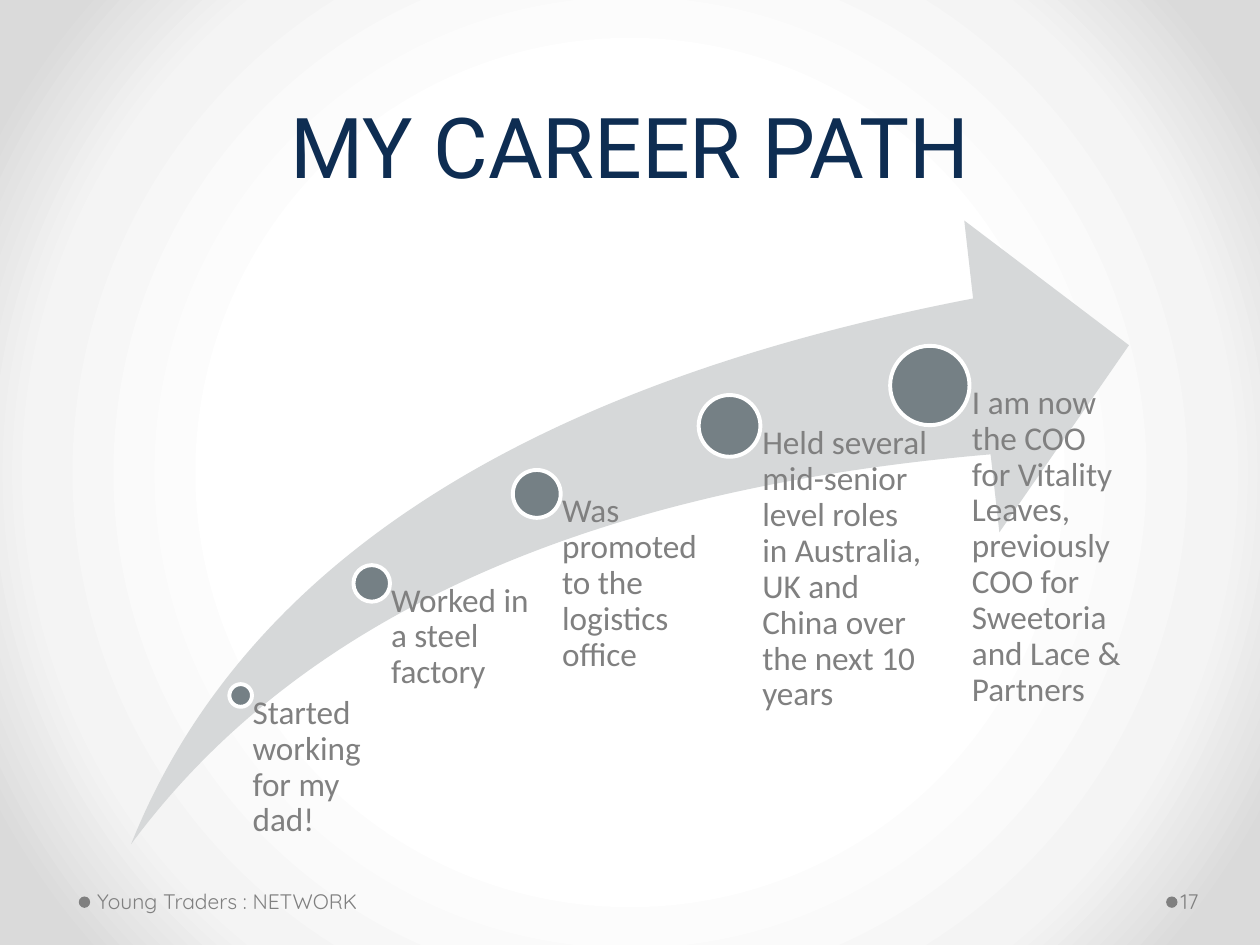
import pptx
import pptx.dml.color
import pptx.enum.shapes
import pptx.enum.text
import pptx.oxml
import pptx.oxml.ns
import pptx.util

Inches, Pt = pptx.util.Inches, pptx.util.Pt
SHAPE = pptx.enum.shapes.MSO_SHAPE
ALIGN = pptx.enum.text.PP_ALIGN
ANCHOR = pptx.enum.text.MSO_ANCHOR

COLORS = {
    "navy": "0E2D52",
    "gray": "808080",
    "arrow": "D6D8D9",
    "dot": "758085",
    "white": "FFFFFF",
    "pale": "F4F4F4",
    "edge": "DADADA",
}
FOOT = 6.95
BASE = 6.7  # bottom of the arrow and of all step texts

# centre x, centre y, diameter, text width, text
STEPS = [
    (1.91, 5.52, 0.18, 1.04, "Started working for my dad!"),
    (2.95, 4.63, 0.29, 1.31, "Worked in a steel factory"),
    (4.26, 3.92, 0.38, 1.53, "Was promoted to the logistics office"),
    (5.79, 3.38, 0.49, 1.58, "Held several mid-senior level roles in Australia, "
     "UK and China over the next 10 years"),
    (7.38, 3.06, 0.63, 1.58, "I am now the COO for Vitality Leaves, previously "
     "COO for Sweetoria and Lace & Partners"),
]


def rgb(name):
    return pptx.dml.color.RGBColor.from_string(COLORS[name])


def apply(target, values):
    for name, value in values.items():
        setattr(target, name, value)


class Deck:
    """Holds the text styles and the current slide."""

    styles = {
        "title": {"name": "Roboto", "size": Pt(48)},
        "step": {"name": "Calibri", "size": Pt(19)},
        "foot": {"name": "Quicksand", "size": Pt(12)},
    }

    def __init__(self, slide):
        self.slide = slide

    def glow(self, stops):
        """Fill the background with a gradient from the centre outwards."""
        fill = self.slide.background.fill
        fill.gradient()
        grad = self.slide.background._cSld.find(".//" + pptx.oxml.ns.qn("a:gradFill"))
        for child in list(grad):
            grad.remove(child)
        space = pptx.oxml.ns.nsdecls("a")
        marks = "".join(
            f'<a:gs pos="{place * 1000}"><a:srgbClr val="{COLORS[name]}"/></a:gs>'
            for place, name in stops)
        grad.append(pptx.oxml.parse_xml(f"<a:gsLst {space}>{marks}</a:gsLst>"))
        grad.append(pptx.oxml.parse_xml(
            f'<a:path {space} path="circle">'
            '<a:fillToRect l="50000" t="50000" r="50000" b="50000"/></a:path>'))

    def shape(self, kind, box, color, line=None):
        shape = self.slide.shapes.add_shape(kind, *map(Inches, box))
        shape.shadow.inherit = False
        shape.fill.solid()
        shape.fill.fore_color.rgb = rgb(color)
        if line:
            shape.line.color.rgb = rgb(line)
            shape.line.width = Pt(2.25)
        else:
            shape.line.fill.background()
        return shape

    def dot(self, x, y, size, color, line=None):
        """Draw a circle around the centre x, y."""
        box = (x - size / 2, y - size / 2, size, size)
        return self.shape(SHAPE.OVAL, box, color, line)

    def text(self, words, box, style, color="gray", pads=(0.1, 0.05, 0.1, 0.05),
             anchor=ANCHOR.TOP, **para):
        frame = self.slide.shapes.add_textbox(*map(Inches, box)).text_frame
        sides = ("margin_left", "margin_top", "margin_right", "margin_bottom")
        apply(frame, {"word_wrap": True, "vertical_anchor": anchor,
                      **dict(zip(sides, map(Inches, pads)))})
        first = frame.paragraphs[0]
        apply(first, para)
        run = first.add_run()
        run.text = words
        apply(run.font, self.styles[style])
        run.font.color.rgb = rgb(color)

    def step(self, x, y, size, width, words):
        self.dot(x, y, size, "dot", "white")
        self.text(words, (x, y, width, BASE - y), "step",
                  pads=(size * 0.53, 0, 0, 0), line_spacing=0.9)


def main():
    show = pptx.Presentation()
    apply(show, {"slide_width": Inches(10), "slide_height": Inches(7.5)})
    deck = Deck(show.slides.add_slide(show.slide_layouts[6]))

    deck.glow([(50, "white"), (76, "pale"), (92, "edge")])
    for x in (9.3, 0.67):
        deck.dot(x, 7.16, 0.09, "gray")
    deck.text("MY CAREER PATH", (0.5, 0.15, 9, 1.45), "title", "navy",
              anchor=ANCHOR.BOTTOM, alignment=ALIGN.CENTER, line_spacing=Pt(58))

    arrow = deck.shape(SHAPE.SWOOSH_ARROW, (1.04, 1.75, 7.92, BASE - 1.75), "arrow")
    for i in range(2):
        arrow.adjustments[i] = 0.25
    for step in STEPS:
        deck.step(*step)

    deck.text("Young Traders : NETWORK", (0.72, FOOT, 3.11, 0.4), "foot",
              pads=(0.05, 0.05, 0.1, 0.05), anchor=ANCHOR.MIDDLE)
    deck.text("17", (9.34, FOOT, 0.61, 0.4), "foot",
              pads=(0.03, 0.05, 0.05, 0.05), anchor=ANCHOR.MIDDLE)
    show.save("out.pptx")


if __name__ == "__main__":
    main()
